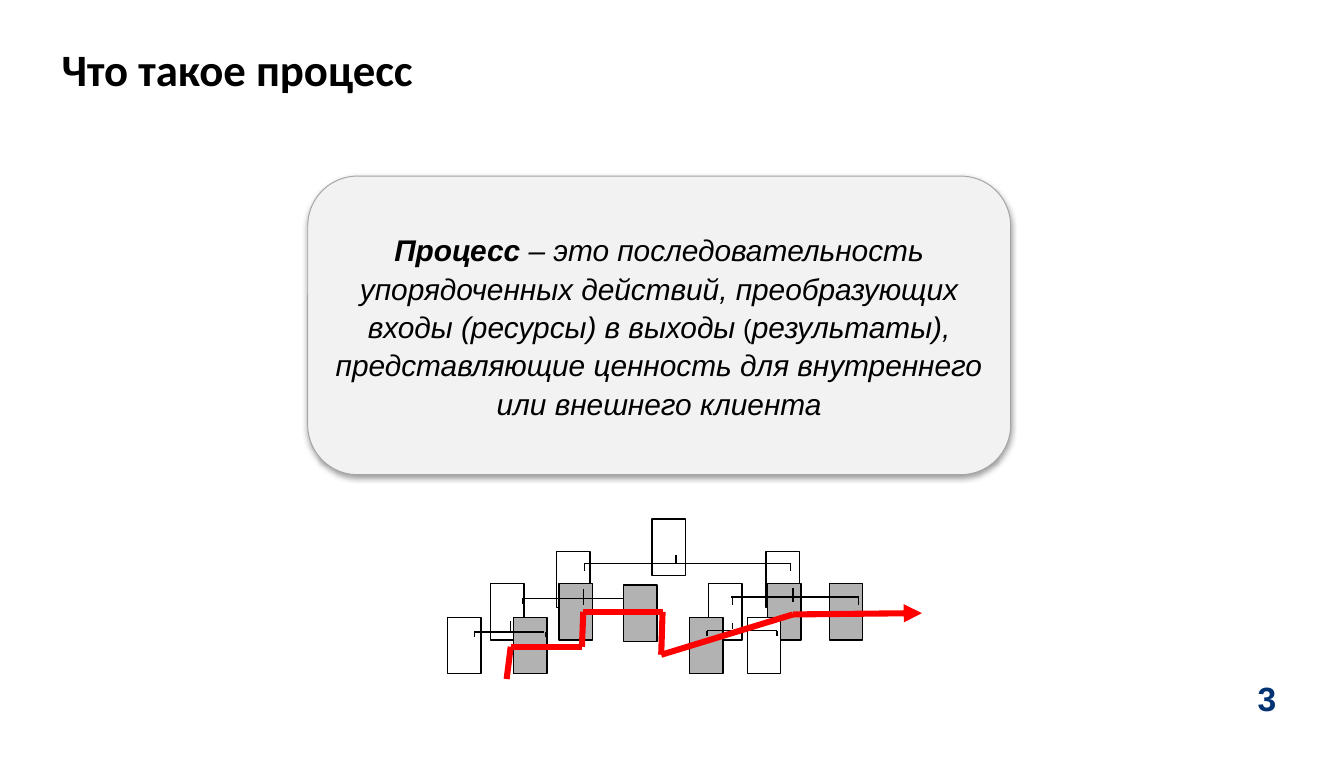
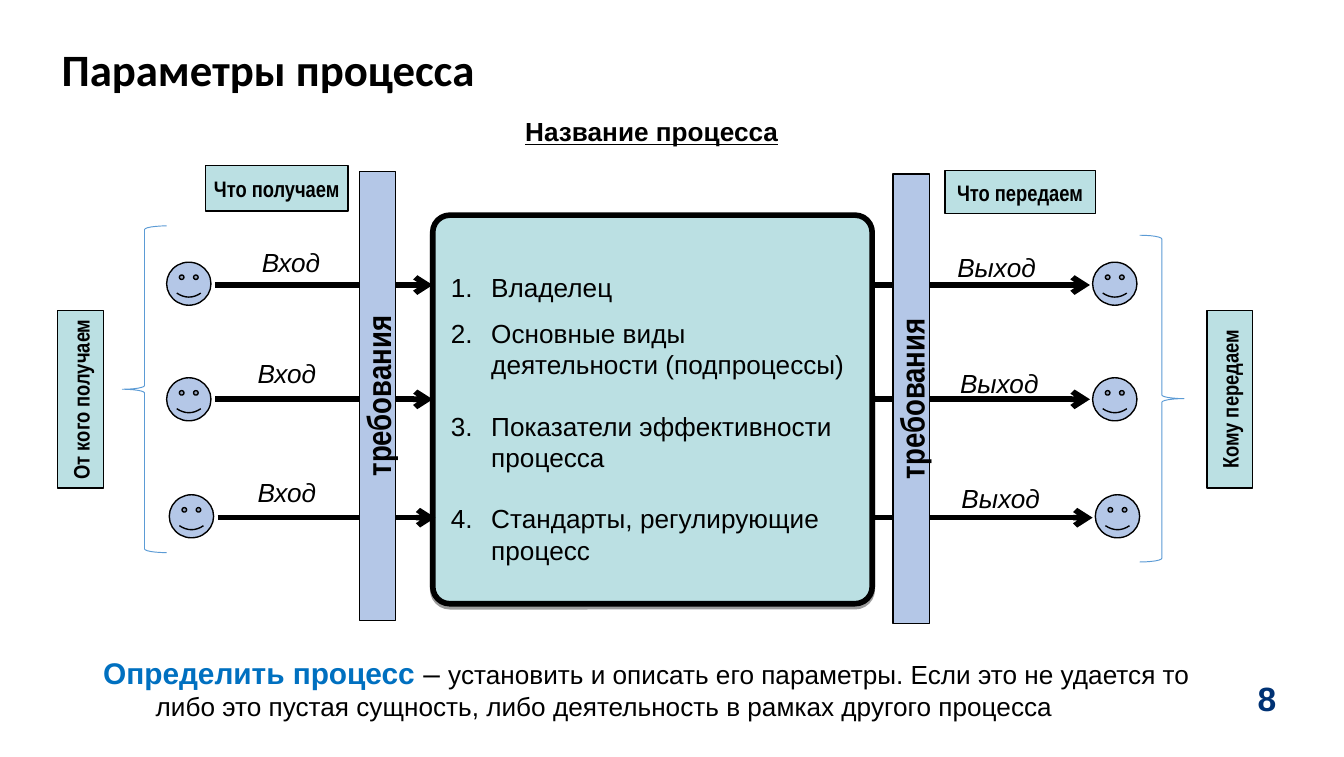
from itertools import pairwise

from lxml import etree
from pptx import Presentation
from pptx import util as u
from pptx.dml.color import RGBColor
from pptx.enum import shapes, text
from pptx.oxml.ns import qn

PX = 9144  # 100 px to the inch
BLACK, WHITE, GREY, RED = "000000", "FFFFFF", "B2B2B2", "FF0000"
TEAL, BLUE, PALE, SILVER = "BBE0E3", "B4C7E7", "F2F2F2", "A5A5A5"
NAVY, ACCENT, BRACE = "003274", "0070C0", "5B9BD5"
KIND, ALIGN = shapes.MSO_SHAPE, text.PP_ALIGN


def px(n):
    return u.Emu(n * PX)


def rgb(value):
    return RGBColor.from_string(value)


class Deck:
    """Holds the shared style and the slide being filled."""

    def __init__(self):
        self.prs = Presentation()
        self.prs.slide_width, self.prs.slide_height = px(1000), px(563)

    def slide(self, title, number):
        self.s = self.prs.slides.add_slide(self.prs.slide_layouts[6])
        self.target = self.s.shapes
        self.label(36, 31, 835, 54, title, 24, font="Calibri", bold=True).line_spacing = 0.9
        self.label(926, 499, 40, 41, number, 18, color=NAVY, bold=True)

    def style(self, r, size, font="Arial", color=BLACK, bold=False, italic=False, underline=False):
        r.font.size, r.font.name = u.Pt(size), font
        r.font.color.rgb = rgb(color)
        r.font.bold, r.font.italic, r.font.underline = bold, italic, underline

    def runs(self, p, parts):
        for words, look in parts:
            r = p.add_run()
            r.text = words
            self.style(r, **look)

    def fill_text(self, p, words, size, align=None, **look):
        p.text = words
        p.alignment = align
        self.style(p.runs[0], size, **look)
        return p

    def box(self, x, y, w, h):
        tf = self.target.add_textbox(px(x), px(y), px(w), px(h)).text_frame
        tf.word_wrap = True
        return tf

    def label(self, x, y, w, h, words, size, **look):
        return self.fill_text(self.box(x, y, w, h).paragraphs[0], words, size, **look)

    def shape(self, kind, x, y, w, h, fill=None, line=BLACK, weight=0.75, turn=0, adj=None):
        sp = self.target.add_shape(kind, px(x), px(y), px(w), px(h))
        sp.shadow.inherit = False
        sp.rotation = turn
        if fill:
            sp.fill.solid()
            sp.fill.fore_color.rgb = rgb(fill)
        else:
            sp.fill.background()
        sp.line.color.rgb = rgb(line)
        sp.line.width = u.Pt(weight)
        if adj is not None:
            sp.adjustments[0] = adj
        return sp

    def plate(self, x, y, w, h, words, size=12, fill=TEAL, turn=0):
        tf = self.shape(KIND.RECTANGLE, x, y, w, h, fill, turn=turn).text_frame
        tf.word_wrap = False
        tf.vertical_anchor = text.MSO_ANCHOR.MIDDLE
        self.fill_text(tf.paragraphs[0], words, size, ALIGN.CENTER, font="Arial Narrow", bold=True)

    def card(self, x, y, w, h, fill, line, weight, blur, adj=None):
        """Rounded panel with a soft shadow below it."""
        sp = self.shape(KIND.ROUNDED_RECTANGLE, x, y, w, h, fill, line, weight, adj=adj)
        effects = sp._element.spPr.find(qn("a:effectLst"))
        shadow = etree.SubElement(effects, qn("a:outerShdw"), blurRad=str(u.Pt(blur)),
                                  dist=str(u.Pt(1.6)), dir="5400000", rotWithShape="0")
        color = etree.SubElement(shadow, qn("a:srgbClr"), val=BLACK)
        etree.SubElement(color, qn("a:alpha"), val="38000")
        tf = sp.text_frame
        tf.word_wrap = True
        tf.vertical_anchor = text.MSO_ANCHOR.MIDDLE
        return tf

    def line(self, x1, y1, x2, y2, color=BLACK, weight=0.75, head=None):
        c = self.target.add_connector(shapes.MSO_CONNECTOR.STRAIGHT, px(x1), px(y1), px(x2), px(y2))
        c.line.color.rgb = rgb(color)
        c.line.width = u.Pt(weight)
        spPr = c._element.spPr
        if head:
            etree.SubElement(spPr.find(qn("a:ln")), qn("a:tailEnd"), type=head)
        etree.SubElement(spPr, qn("a:effectLst"))

    def hang(self, p, indent, numbered=False):
        pPr = p._p.get_or_add_pPr()
        pPr.set("marL", str(px(indent)))
        pPr.set("indent", str(px(-indent)))
        if numbered:
            etree.SubElement(pPr, qn("a:buFont"), typeface="+mj-lt")
            etree.SubElement(pPr, qn("a:buAutoNum"), type="arabicPeriod")


def definition_slide(d):
    d.slide("Что такое процесс", "3")

    # Organisation tree, units on the process route in grey
    d.target = d.s.shapes.add_group_shape().shapes

    def unit(x, y, fill):
        d.shape(KIND.RECTANGLE, x, y, 25, 42, fill)

    levels = {
        386: [(485, WHITE)],
        410: [(414, WHITE), (570, WHITE)],
        434: [(365, WHITE), (416, GREY), (527, WHITE), (571, GREY), (617, GREY)],
        459: [(333, WHITE), (382, GREY), (513, GREY), (556, WHITE)],
    }
    for y, units in levels.items():
        for x, fill in units:
            unit(x, y, fill)

    # Branches: bar, stem, ends of the drops
    branches = [
        ((435, 588, 419), (503, 413, 419), (435, 588), 425),
        ((389, 483, 445), (434, 438, 450), (389,), 449),
        ((544, 639, 444), (590, 437, 448), (545, 639), 450),
        ((353, 405, 470), (380, 462, 470), (353, 406), 474),
        ((526, 578, 469), (545, 463, 468), (526, 578), 473),
    ]
    for (x1, x2, y), (stem, top, bottom), drops, end in branches:
        d.line(x1, y, x2, y)
        d.line(stem, top, stem, bottom)
        for x in drops:
            d.line(x, y, x, end)
    unit(464, 435, GREY)

    # Process route
    route = [(377, 505), (380, 481), (433, 481), (434, 455), (493, 455),
             (492, 487), (590, 457), (686, 456)]
    for start, end in pairwise(route):
        d.line(*start, *end, RED, 3.25, "triangle" if end == route[-1] else None)
    d.target = d.s.shapes

    # Definition
    p = d.card(229, 131, 523, 222, PALE, SILVER, 0.5, blur=3.1).paragraphs[0]
    p.alignment, p.line_spacing, p.space_after = ALIGN.CENTER, 1.07, u.Pt(8)
    slanted = dict(size=16, italic=True)
    d.runs(p, [
        ("Процесс", dict(slanted, bold=True)),
        (" – это последовательность упорядоченных действий, "
         "преобразующих входы (ресурсы) в выходы", slanted),
        (" (", dict(size=14)),
        ("результаты), представляющие ценность для внутреннего или внешнего клиента", slanted),
    ])


def parameters_slide(d):
    d.slide("Параметры процесса", "8")

    # Process body
    tf = d.card(322, 160, 327, 289, TEAL, BLACK, 3, blur=0, adj=0.044)
    tf.margin_top = px(18)
    items = [("Владелец", 0), ("Основные виды деятельности (подпроцессы)", 8),
             ("Показатели эффективности процесса", 16), ("Стандарты, регулирующие процесс", 16)]
    for i, (words, gap) in enumerate(items):
        p = tf.add_paragraph() if i else tf.paragraphs[0]
        d.hang(p, 30, numbered=True)
        if gap:
            p.space_before = u.Pt(gap)
        d.fill_text(p, words, 14, ALIGN.LEFT)

    # Flows between the process and its partners
    for y, shift in ((212, 0), (297, 0), (385, 2)):
        for x in (160, 649):
            d.line(x + shift, y, x + shift + 162, y, weight=3, head="arrow")
    for y, shift in ((195, 0), (281, 0), (368, 2)):
        for x in (124, 813):
            d.shape(KIND.SMILEY_FACE, x + shift, y, 33, 32, BLUE, adj=0.047)
    flows = [("Вход", 172, 178), ("Вход", 169, 261), ("Вход", 169, 349),
             ("Выход", 697, 182), ("Выход", 699, 268), ("Выход", 700, 354)]
    for words, x, y in flows:
        d.label(x, y, 89, 34, words, 14, align=ALIGN.CENTER, italic=True)

    # Requirements bars and captions
    for x, y in ((114, 281), (511, 283)):
        d.plate(x, y, 334, 27, "требования", 18, BLUE, 270)
    d.plate(153, 123, 106, 34, "Что получаем")
    d.plate(703, 127, 112, 32, "Что передаем")
    d.plate(-6, 280, 132, 34, "От кого получаем", turn=270)
    d.plate(849, 280, 132, 34, "Кому передаем", turn=270)
    for x, y, turn in ((91, 168, 180), (848, 175, 0)):
        d.shape(KIND.RIGHT_BRACE, x, y, 33, 243, line=BRACE, weight=0.5, turn=turn)
    d.label(235, 81, 500, 34, "Название процесса", 14, align=ALIGN.CENTER,
            bold=True, underline=True)

    # Conclusion
    p = d.box(67, 482, 837, 61).paragraphs[0]
    d.hang(p, 39)
    d.runs(p, [
        ("Определить процесс ", dict(size=16, color=ACCENT, bold=True)),
        ("– ", dict(size=16)),
        ("установить и описать его параметры. Если это не удается то либо это "
         "пустая сущность, либо деятельность в рамках другого процесса", dict(size=14)),
    ])


def main():
    d = Deck()
    definition_slide(d)
    parameters_slide(d)
    d.prs.save("out.pptx")


if __name__ == "__main__":
    main()
